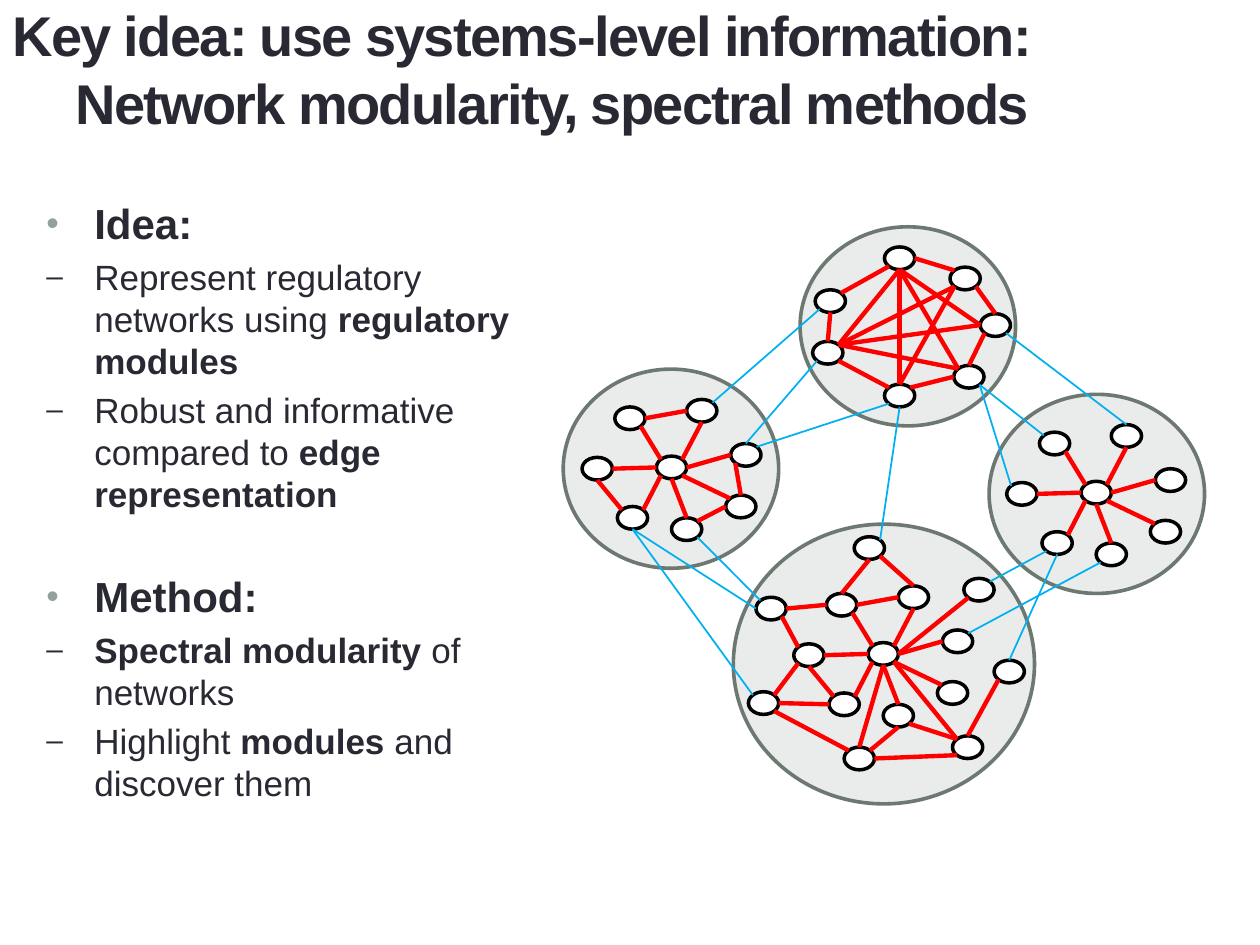
from math import cos, sin, radians
from pptx import Presentation
from pptx.dml.color import RGBColor
from pptx.enum.shapes import MSO_CONNECTOR, MSO_SHAPE
from pptx.enum.text import MSO_ANCHOR
from pptx.oxml.ns import qn
from pptx.util import Inches, Pt
from lxml.etree import SubElement

COLORS = {"ink": "292934", "bullet": "93A299", "module": "E9ECEB", "rim": "6D7871",
          "node": "FFFFFF", "outline": "000000", "inner": "FF0000", "cross": "00B0F0"}
NODE_W, NODE_H = 0.24, 0.18
ANGLES = {"e": 0, "se": 45, "s": 90, "sw": 135, "w": 180, "nw": 225, "n": 270, "ne": 315}

MODULES = [(4.47, 2.93, 1.71, 1.58), (7.85, 3.13, 1.71, 1.58),
           (5.82, 4.16, 2.39, 2.22), (6.35, 1.8, 1.71, 1.58)]

STAR = [(0, 0), (0.33, 0.39), (0.57, -0.06), (0.92, 0.29),
        (0.45, 0.88), (0.02, 0.79), (-0.26, 0.4), (0.88, 0.7)]
STAR_ORIGINS = {"L": (4.88, 3.23), "B": (6.56, 4.71), "R": (8.25, 3.43)}
SPOKES = ["0se 1nw", "1ne 2s", "1e 3w", "1se 7nw", "1s 4n", "1sw 5ne", "1w 6e"]
RIM_EDGES = ["0e 2w", "6s 5nw"]
STAR_EDGES = {"L": SPOKES + RIM_EDGES + ["3sw 7n", "4ne 7w"],
              "B": SPOKES + RIM_EDGES, "R": SPOKES}

OTHER_NODES = {
    "T": [(7.02, 1.96), (7.54, 2.12), (7.78, 2.49), (7.02, 3.05),
          (6.45, 2.71), (6.47, 2.3), (7.57, 2.9)],
    "X": [(7.56, 5.84), (7.89, 5.24), (6.7, 5.93), (5.94, 5.49),
          (6, 4.74), (6.78, 4.26), (7.65, 4.59)],
}
INNER_EDGES = [
    "T0sw T5ne", "T2n T1se", "T0e T1nw", "T5s T4n", "T2sw T6n", "T3ne T6w",
    "B1se X0nw", "X0n X1sw", "X0sw X2e", "X3ne B6sw", "X3e B5w", "X4se B6nw",
    "X4e B0w", "X3se X2nw", "X5s B0n", "X5se B2n", "B1e X6sw", "B1s X2n",
    "B4se X0nw", "B4s X2ne", "T4se T3nw", "T4ne T0s", "T4ne T2w", "T4ne T1sw",
    "T0s T3n", "T0s T6nw", "T0s T2w", "T4ne T6nw", "T1sw T3n",
]
CROSS_EDGES = [
    "L4se X4nw", "R5sw X6ne", "X1n R5s", "L3ne T3sw", "T6se R6nw", "T6se R0nw",
    "L3n T4sw", "T5sw L2ne", "T3s X5ne", "X4w L5s", "R4sw B3ne", "R2n T2se", "L5s X3nw",
]

IDEA = ["Idea:",
        [("Represent regulatory networks using ", False), ("regulatory modules", True)],
        [("Robust and informative compared to ", False), ("edge representation", True)]]
METHOD = ["Method:",
          [("Spectral modularity ", True), ("of networks", False)],
          [("Highlight ", False), ("modules", True), (" and discover them", False)]]


def rgb(name):
    return RGBColor.from_string(COLORS[name])


def add_run(p, text, size=20, bold=False, color="ink", font="Arial", spacing=None):
    r = p.add_run()
    r.text = text
    r.font.size = Pt(size)
    r.font.bold = bold
    r.font.name = font
    r.font.color.rgb = rgb(color)
    if spacing is not None:
        r._r.get_or_add_rPr().set("spc", str(int(spacing * 100)))
    return r


class Deck:
    def __init__(self, width, height):
        self.prs = Presentation()
        self.prs.slide_width, self.prs.slide_height = Inches(width), Inches(height)
        self.s = self.prs.slides.add_slide(self.prs.slide_layouts[6])

    def ellipse(self, x, y, w, h, fill, line, width):
        sp = self.s.shapes.add_shape(MSO_SHAPE.OVAL, *map(Inches, (x, y, w, h)))
        sp.shadow.inherit = False
        sp.fill.solid()
        sp.fill.fore_color.rgb = rgb(fill)
        sp.line.color.rgb = rgb(line)
        sp.line.width = Pt(width)

    def edge(self, start, end, color, width):
        c = self.s.shapes.add_connector(MSO_CONNECTOR.STRAIGHT, *map(Inches, start + end))
        c.line.color.rgb = rgb(color)
        c.line.width = Pt(width)
        SubElement(c._element.spPr, qn("a:effectLst"))

    def textbox(self, x, y, w, h):
        tf = self.s.shapes.add_textbox(*map(Inches, (x, y, w, h))).text_frame
        tf.word_wrap = True
        return tf

    def title(self, first, second):
        tf = self.textbox(0, 0, 10, 1.08)
        tf.vertical_anchor = MSO_ANCHOR.MIDDLE
        p = tf.paragraphs[0]
        add_run(p, first, size=32, bold=True, spacing=-1)
        p.add_line_break()
        add_run(p, "\t" + second, size=32, bold=True, spacing=-1)

    def bullet(self, p, char, color):
        pPr = p._p.get_or_add_pPr()
        pPr.set("marL", str(Inches(0.38)))
        pPr.set("indent", str(-Inches(0.38)))
        SubElement(SubElement(pPr, qn("a:spcBef")), qn("a:spcPct"), val="20000")
        SubElement(SubElement(pPr, qn("a:buClr")), qn("a:srgbClr"), val=COLORS[color])
        SubElement(pPr, qn("a:buSzPct"), val="85000")
        SubElement(pPr, qn("a:buFont"), typeface="Arial")
        SubElement(pPr, qn("a:buChar"), char=char)

    def bullets(self, y, heading, *items):
        tf = self.textbox(0.27, y, 3.88, 2.73)
        p = tf.paragraphs[0]
        self.bullet(p, "•", "bullet")
        add_run(p, heading, size=24, bold=True)
        for item in items:
            p = tf.add_paragraph()
            self.bullet(p, "–", "ink")
            for text, bold in item:
                add_run(p, text, bold=bold)


def build_nodes():
    nodes = {f"{key}{i}": (x + dx, y + dy)
             for key, (x, y) in STAR_ORIGINS.items() for i, (dx, dy) in enumerate(STAR)}
    nodes.update({f"{key}{i}": pos
                  for key, group in OTHER_NODES.items() for i, pos in enumerate(group)})
    return nodes


def site(nodes, ref):
    x, y = nodes[ref[:2]]
    a = radians(ANGLES[ref[2:]])
    return x + NODE_W / 2 * (1 + cos(a)), y + NODE_H / 2 * (1 + sin(a))


def main():
    deck = Deck(10, 7.5)
    for box in MODULES:
        deck.ellipse(*box, "module", "rim", 2.08)
    deck.title("Key idea: use systems-level information: ",
               "Network modularity, spectral methods")
    nodes = build_nodes()
    for x, y in nodes.values():
        deck.ellipse(x, y, NODE_W, NODE_H, "node", "outline", 2)
    star_edges = [" ".join(key + end for end in edge.split())
                  for key, edges in STAR_EDGES.items() for edge in edges]
    for edges, color, width in ((star_edges + INNER_EDGES, "inner", 2.5),
                                (CROSS_EDGES, "cross", 1)):
        for edge in edges:
            start, end = (site(nodes, ref) for ref in edge.split())
            deck.edge(start, end, color, width)
    deck.bullets(1.52, *IDEA)
    deck.bullets(4.48, *METHOD)
    deck.prs.save("out.pptx")


if __name__ == "__main__":
    main()
